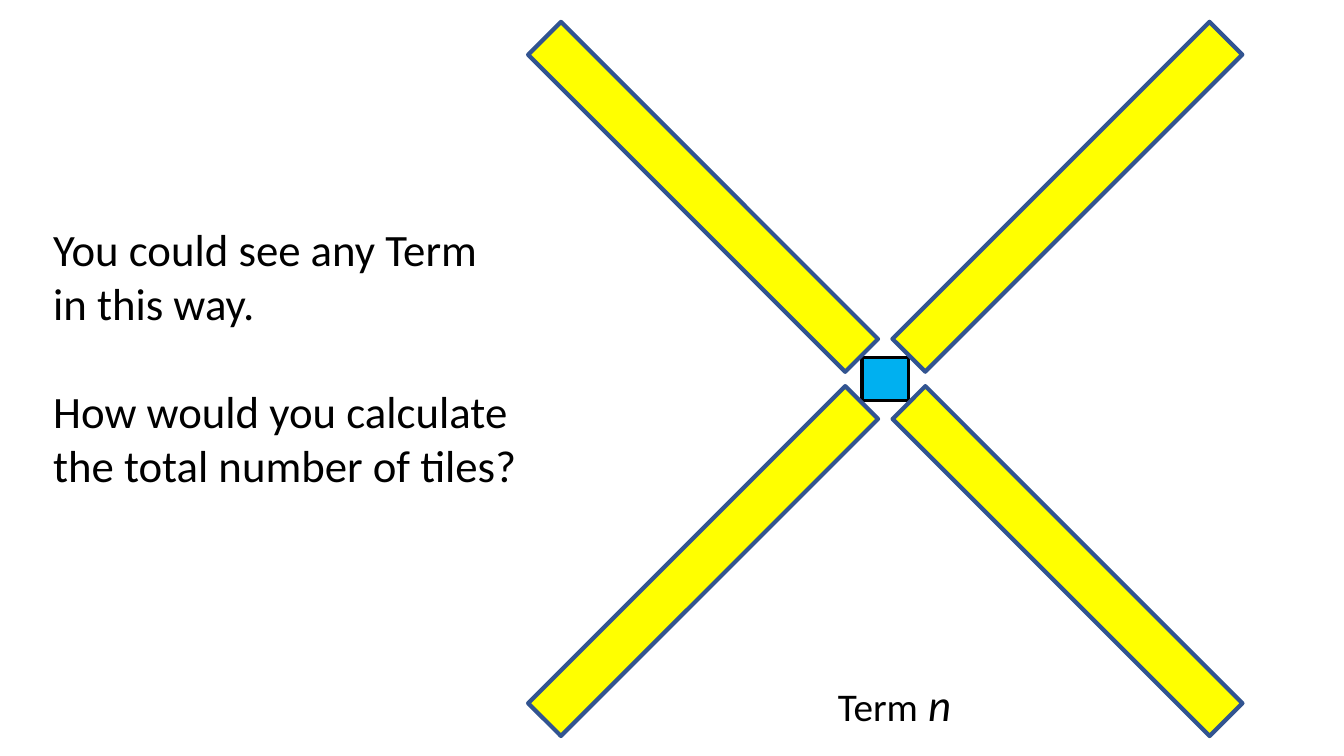
from pptx import Presentation
from pptx.dml.color import RGBColor
from pptx.enum.shapes import MSO_SHAPE
from pptx.enum.text import PP_ALIGN
from pptx.util import Cm, Pt

RECT = MSO_SHAPE.RECTANGLE
LEFT, CENTER = PP_ALIGN.LEFT, PP_ALIGN.CENTER
COLORS = {"text": "000000", "tile": "00B0F0", "tile_line": "000000",
          "arm": "FFFF00", "arm_line": "325491"}


class SlideBuilder:
    font = "Calibri"

    def __init__(self, slide):
        self.s = slide

    def color(self, name):
        return RGBColor.from_string(COLORS[name])

    def rect(self, cx, cy, w, h, name, line_width, rotation=0):
        """Add a rectangle placed by its centre."""
        sp = self.s.shapes.add_shape(RECT, Cm(cx - w / 2), Cm(cy - h / 2), Cm(w), Cm(h))
        sp.shadow.inherit = False
        sp.fill.solid()
        sp.fill.fore_color.rgb = self.color(name)
        sp.line.color.rgb = self.color(name + "_line")
        sp.line.width = Pt(line_width)
        sp.rotation = rotation

    def text(self, x, y, w, h, paragraphs, align=LEFT):
        """Add a text box; each paragraph is a list of (text, size, italic)."""
        tf = self.s.shapes.add_textbox(Cm(x), Cm(y), Cm(w), Cm(h)).text_frame
        tf.word_wrap = True
        for i, runs in enumerate(paragraphs):
            p = tf.add_paragraph() if i else tf.paragraphs[0]
            p.alignment = align
            for content, size, italic in runs:
                r = p.add_run()
                r.text = content
                r.font.name = self.font
                r.font.size = Pt(size)
                r.font.italic = italic
                r.font.color.rgb = self.color("text")
        return tf


def main():
    prs = Presentation()
    prs.slide_width, prs.slide_height = Cm(33.87), Cm(19.05)
    b = SlideBuilder(prs.slides.add_slide(prs.slide_layouts[6]))

    # Term label
    b.text(19.46, 16.94, 6.17, 1.63,
           [[("Term", 28, False), (" ", 32, False), ("n", 32, True)]], CENTER)

    # Question, set apart by one line
    lines = ["You could see any Term", "in this way.",
             "How would you calculate the total number of tiles?"]
    tf = b.text(1.09, 5.46, 13.46, 7.09, [[(line, 32, False)] for line in lines])
    tf.paragraphs[-1].space_before = Pt(39)

    # Centre tile with four diagonal arms
    cx, cy, offset = 22.31, 9.55, 4.59
    b.rect(cx, cy, 1.17, 1.09, "tile", 2.25)
    for dx, dy, rotation in [(1, -1, 45), (1, 1, 135), (-1, -1, 315), (-1, 1, 45)]:
        b.rect(cx + dx * offset, cy + dy * offset, 1.17, 11.3, "arm", 3, rotation)

    prs.save("out.pptx")


if __name__ == "__main__":
    main()
